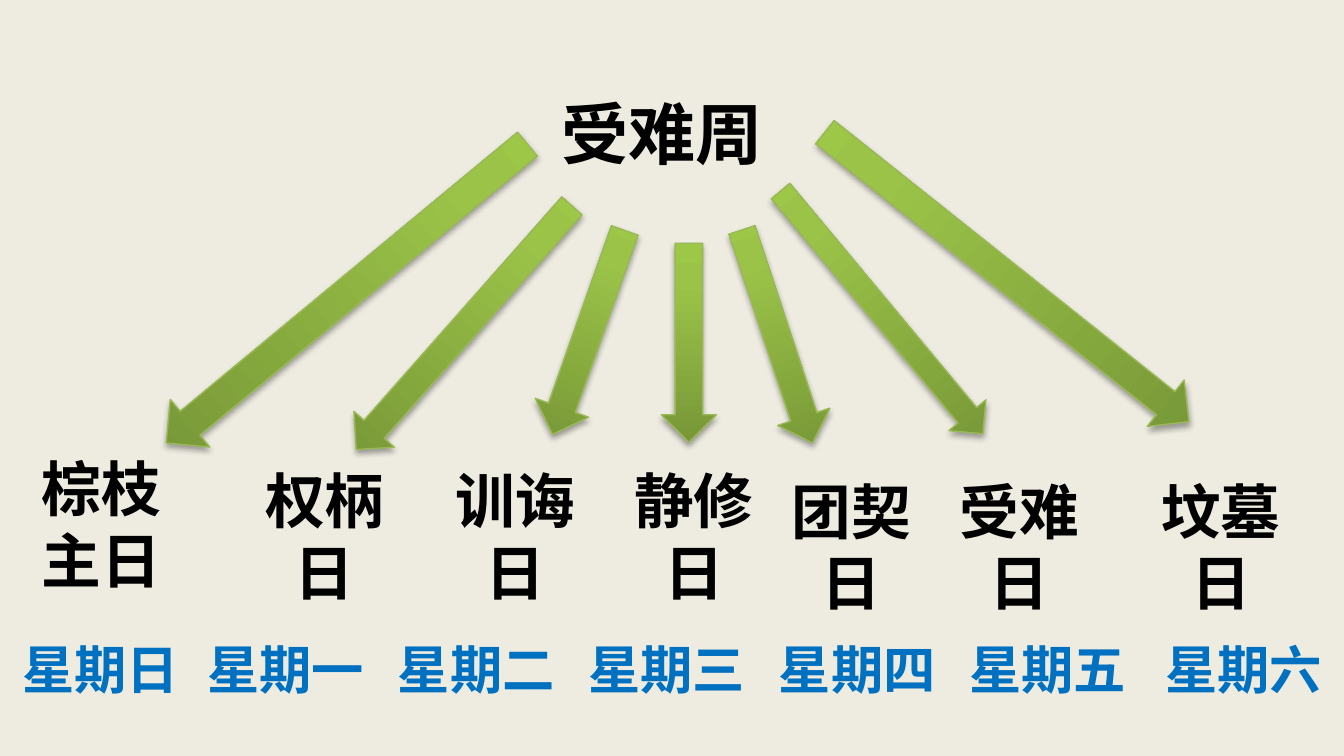
from lxml import etree
from pptx import Presentation
from pptx import util as u
from pptx.dml.color import RGBColor
from pptx.enum import shapes, text
from pptx.oxml import ns, parse_xml

HUES = {"back": "EEECE1", "ink": "000000", "day": "0070C0", "edge": "98B955",
        "low": "779737", "mid": "9BC348", "high": "9DC746"}
FONT = "Calibri"
NAMES = [("棕枝主日", 0.43, 8.41, 2.97), ("权柄日", 4.45, 8.64, 3.38),
         ("训诲日", 8.26, 8.64, 2.97), ("静修日", 11.63, 8.64, 2.97),
         ("团契日", 14.61, 8.84, 2.97), ("受难日", 17.78, 8.84, 2.97),
         ("坟墓日", 21.59, 8.84, 2.97)]
ARROWS = [(5.97, 1.12, 1.17, 8.86, 50.4), (8.26, 3.12, 1.02, 6.15, 41.5),
          (10.59, 4.24, 1.07, 4.09, 19.5), (12.5, 4.6, 1.04, 3.76, 0),
          (14.17, 4.24, 1.04, 4.24, 341.7), (16.21, 2.92, 0.91, 5.97, 320.2),
          (18.47, 0.84, 1.12, 8.79, 308.5)]


def tint(name):
    """Return the named colour."""
    return RGBColor.from_string(HUES[name])


def write(frame, words, size, hue):
    """Write one bold centred run in a text frame."""
    frame.word_wrap = True
    para = frame.paragraphs[0]
    para.alignment = text.PP_ALIGN.CENTER
    run = para.add_run()
    run.text = words
    font = run.font
    font.name, font.size, font.bold = FONT, u.Pt(size), True
    font.color.rgb = tint(hue)
    east = etree.SubElement(run._r.get_or_add_rPr(), ns.qn("a:ea"))
    east.set("typeface", FONT)


def label(slide, box, words, size, hue):
    """Add a text box, centred both ways, in the given box."""
    frame = slide.shapes.add_textbox(*map(u.Cm, box)).text_frame
    frame.vertical_anchor = text.MSO_ANCHOR.MIDDLE
    write(frame, words, size, hue)


def head(slide, box):
    """Place the title with its words near the top of the box."""
    title = slide.shapes.title
    title.left, title.top, title.width, title.height = map(u.Cm, box)
    frame = title.text_frame
    frame.vertical_anchor = text.MSO_ANCHOR.TOP
    frame.margin_left, frame.margin_right = 0, u.Cm(0.38)
    frame.margin_top = u.Cm(1.74)
    write(frame, "受难周", 36, "ink")


def arrow(slide, box, turn):
    """Add a green shaded down arrow, turned by some degrees."""
    shape = slide.shapes.add_shape(shapes.MSO_SHAPE.DOWN_ARROW, *map(u.Cm, box))
    shape.rotation = turn
    shape.line.color.rgb = tint("edge")
    shape.line.width = u.Pt(0.75)
    stops = "".join(f'<a:gs pos="{pos}"><a:srgbClr val="{HUES[hue]}"/></a:gs>'
                    for pos, hue in ((0, "low"), (80000, "mid"), (100000, "high")))
    fill = parse_xml(f'<a:gradFill {ns.nsdecls("a")} rotWithShape="1"><a:gsLst>{stops}'
                     '</a:gsLst><a:lin ang="16200000" scaled="0"/></a:gradFill>')
    props = shape._element.spPr
    props.find(ns.qn("a:ln")).addprevious(fill)
    shape.shadow.inherit = False
    shade = parse_xml(f'<a:outerShdw {ns.nsdecls("a")} blurRad="40000" dist="23000" '
                      'dir="5400000" rotWithShape="0"><a:srgbClr val="000000">'
                      '<a:alpha val="35000"/></a:srgbClr></a:outerShdw>')
    props.find(ns.qn("a:effectLst")).append(shade)


def week(slide, box):
    """Spread the seven weekdays along the box."""
    left, top, width, height = box
    step = 3.6
    for i, day in enumerate("日一二三四五六"):
        wide = width - 6 * step if i in (0, 6) else step
        label(slide, (left + i * step, top, wide, height), "星期" + day, 28, "day")


def main():
    """Build and save the slide."""
    deck = Presentation()
    deck.slide_width, deck.slide_height = u.Cm(25.4), u.Cm(14.29)
    slide = deck.slides.add_slide(deck.slide_layouts[5])
    back = slide.background.fill
    back.solid()
    back.fore_color.rgb = tint("back")
    head(slide, (0, 0, 25.4, 10.11))
    for *box, turn in ARROWS:
        arrow(slide, box, turn)
    for name, left, top, width in NAMES:
        label(slide, (left, top, width, 2.97), name, 32, "ink")
    week(slide, (0, 12.22, 25.4, 0.85))
    deck.save("out.pptx")


if __name__ == "__main__":
    main()
